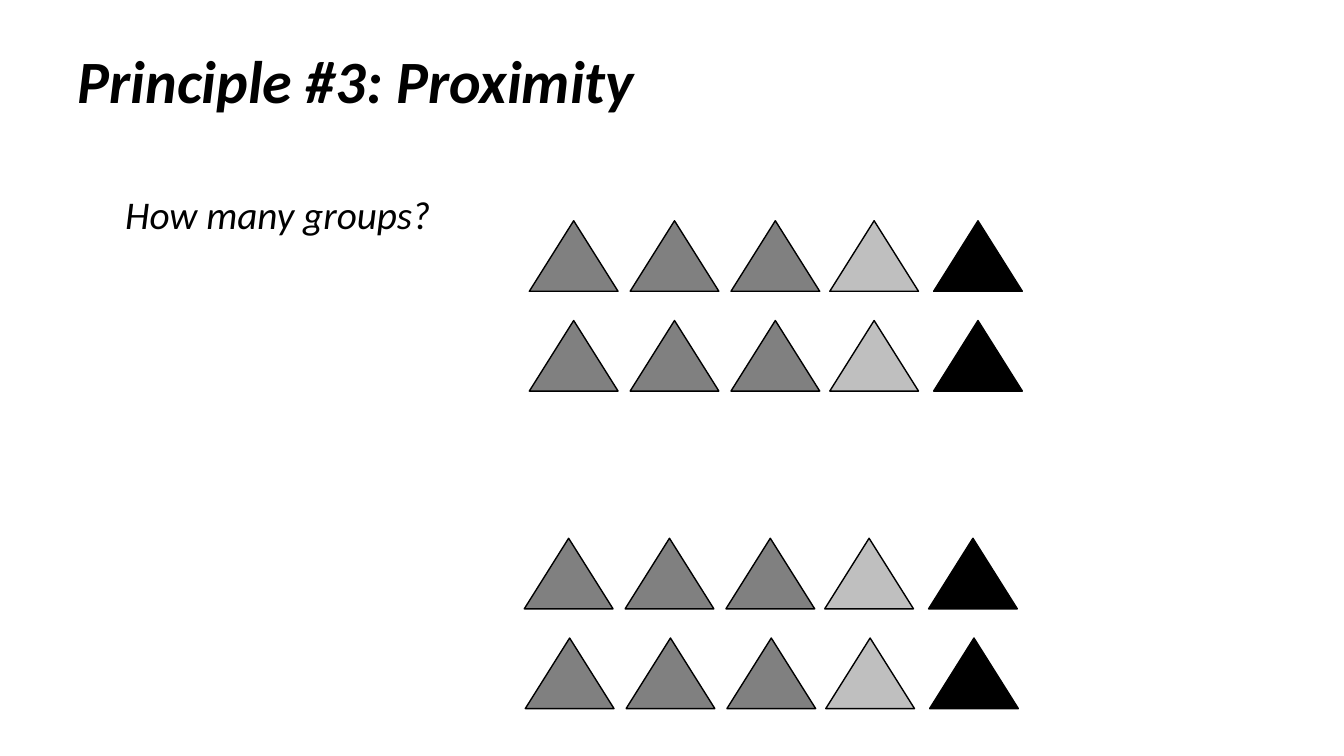
from dataclasses import dataclass

from pptx import Presentation
from pptx import util as u
from pptx.dml.color import RGBColor
from pptx.enum import shapes, text


@dataclass(frozen=True)
class Theme:
    font: str = "Calibri"
    ink: str = "000000"
    gray: str = "808080"
    silver: str = "BFBFBF"
    title_size: float = 42.9
    question_size: float = 28
    outline: float = 1


THEME = Theme()
TITLE_ONLY = 5
TRIANGLE_W, TRIANGLE_H = 88, 70
TRIANGLES = [(0, THEME.gray), (100, THEME.gray), (200, THEME.gray),
             (298, THEME.silver), (401, THEME.ink)]
ROW_ORIGINS = [(525, 219), (525, 318), (520, 534), (521, 633)]


def px(n):
    return u.Emu(n * 9144)


def color(value):
    return RGBColor.from_string(value)


def add_run(p, words, size, bold=False):
    r = p.add_run()
    r.text = words
    r.font.name = THEME.font
    r.font.size = u.Pt(size)
    r.font.bold = bold
    r.font.italic = True
    r.font.color.rgb = color(THEME.ink)


def place_title(s, x, y, w, h):
    sp = s.shapes.title
    sp.left, sp.top, sp.width, sp.height = px(x), px(y), px(w), px(h)
    tf = sp.text_frame
    tf.word_wrap = True
    tf.auto_size = text.MSO_AUTO_SIZE.NONE
    tf.vertical_anchor = text.MSO_ANCHOR.BOTTOM
    p = tf.paragraphs[0]
    p.alignment = text.PP_ALIGN.LEFT
    p.line_spacing = 0.9
    add_run(p, "Principle #3: Proximity", THEME.title_size, bold=True)


def add_question(s, x, y, w, h):
    tf = s.shapes.add_textbox(px(x), px(y), px(w), px(h)).text_frame
    tf.word_wrap = True
    tf.auto_size = text.MSO_AUTO_SIZE.SHAPE_TO_FIT_TEXT
    p = tf.paragraphs[0]
    p.alignment = text.PP_ALIGN.CENTER
    add_run(p, "How many groups?", THEME.question_size)


def add_triangle_row(s, x, y):
    row = s.shapes.add_group_shape()
    for dx, fill in TRIANGLES:
        sp = row.shapes.add_shape(shapes.MSO_SHAPE.ISOSCELES_TRIANGLE,
                                  px(x + dx), px(y), px(TRIANGLE_W), px(TRIANGLE_H))
        sp.shadow.inherit = False
        sp.fill.solid()
        sp.fill.fore_color.rgb = color(fill)
        sp.line.color.rgb = color(THEME.ink)
        sp.line.width = u.Pt(THEME.outline)


def build_proximity_slide(prs):
    s = prs.slides.add_slide(prs.slide_layouts[TITLE_ONLY])
    place_title(s, 67, 21, 909, 100)
    add_question(s, 110, 184, 331, 57)
    for x, y in ROW_ORIGINS:
        add_triangle_row(s, x, y)


def main():
    prs = Presentation()
    prs.slide_width, prs.slide_height = px(1333), px(750)
    build_proximity_slide(prs)
    prs.save("out.pptx")


if __name__ == "__main__":
    main()
